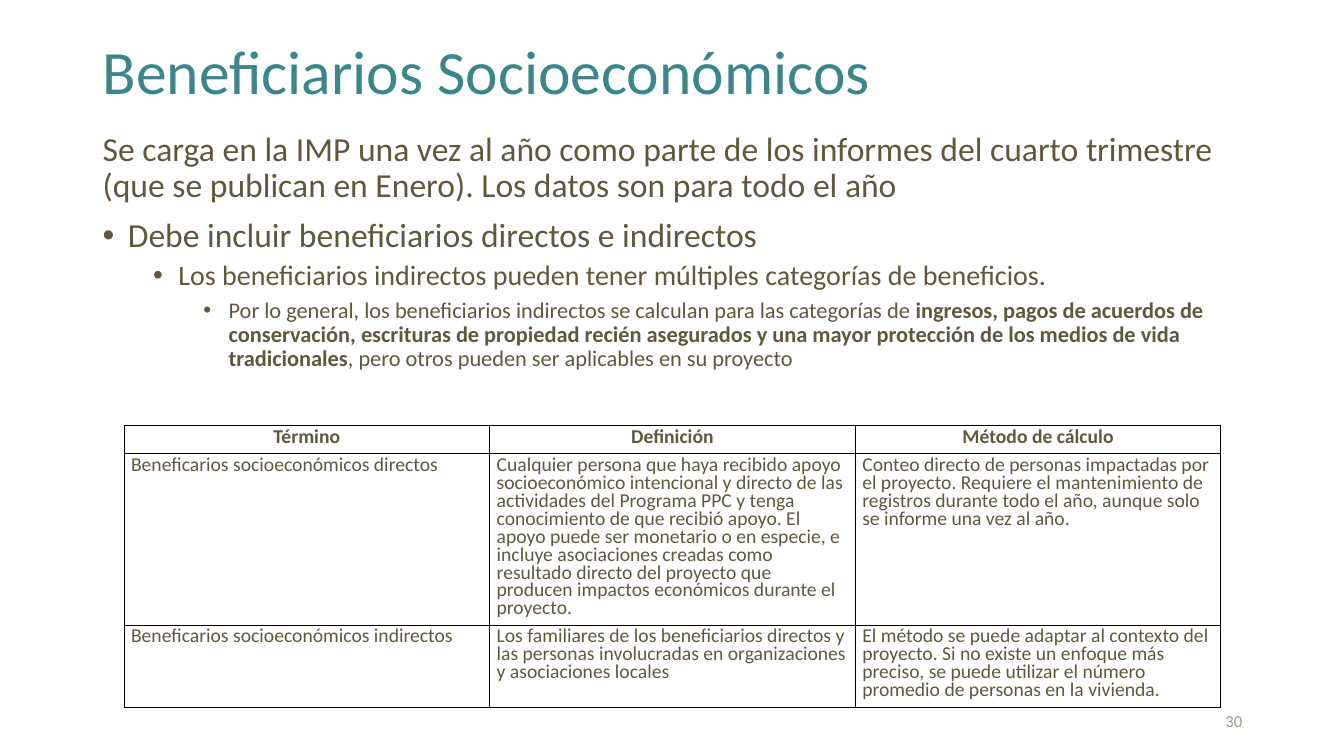
from lxml import etree
from pptx import Presentation
from pptx.dml.color import RGBColor
from pptx.enum.text import MSO_ANCHOR, PP_ALIGN
from pptx.oxml import parse_xml
from pptx.oxml.ns import nsdecls, qn
from pptx.util import Inches, Pt

FONT = "Calibri"
COLORS = {"title": "3C8689", "text": "60583D", "number": "9D9A92", "border": "000000"}

# Each point: text size, left margin, space before, bulleted, runs as (text, bold)
POINTS = [
    (24, 0, 0, False, [(
        "Se carga en la IMP una vez al año como parte de los informes del cuarto trimestre "
        "(que se publican en Enero). Los datos son para todo el año", False)]),
    (24, 0.25, 10, True, [("Debe incluir beneficiarios directos e indirectos", False)]),
    (20, 0.75, 5, True, [(
        "Los beneficiarios indirectos pueden tener múltiples categorías de beneficios.", False)]),
    (16, 1.25, 5, True, [
        ("Por lo general, los beneficiarios indirectos se calculan para las categorías de ", False),
        ("ingresos, pagos de acuerdos de conservación, escrituras de propiedad recién "
         "asegurados y una mayor protección de los medios de vida tradicionales", True),
        (", pero otros pueden ser aplicables en su proyecto", False)]),
]

TERMS = [
    ("Término", "Definición", "Método de cálculo"),
    ("Beneficarios socioeconómicos directos",
     "Cualquier persona que haya recibido apoyo socioeconómico intencional y directo de las "
     "actividades del Programa PPC y tenga conocimiento de que recibió apoyo. El apoyo puede "
     "ser monetario o en especie, e incluye asociaciones creadas como resultado directo del "
     "proyecto que producen impactos económicos durante el proyecto.",
     "Conteo directo de personas impactadas por el proyecto. Requiere el mantenimiento de "
     "registros durante todo el año, aunque solo se informe una vez al año."),
    ("Beneficarios socioeconómicos indirectos",
     "Los familiares de los beneficiarios directos y las personas involucradas en "
     "organizaciones y asociaciones locales",
     "El método se puede adaptar al contexto del proyecto. Si no existe un enfoque más "
     "preciso, se puede utilizar el número promedio de personas en la vivienda."),
]
ROW_HEIGHTS = (0.28, 1.7, 0.81)


def style(run, size, color, bold=False):
    run.font.name = FONT
    run.font.size = Pt(size)
    run.font.bold = bold
    run.font.color.rgb = RGBColor.from_string(COLORS[color])


def add_frame(slide, box, anchor=MSO_ANCHOR.TOP):
    """Add a wrapping text box and return its text frame."""
    frame = slide.shapes.add_textbox(*map(Inches, box)).text_frame
    frame.word_wrap = True
    frame.vertical_anchor = anchor
    return frame


def add_line(slide, box, text, size, color, align=PP_ALIGN.LEFT):
    """Add one vertically centred line of text."""
    paragraph = add_frame(slide, box, MSO_ANCHOR.MIDDLE).paragraphs[0]
    paragraph.text = text
    paragraph.alignment = align
    paragraph.line_spacing = 0.9
    style(paragraph.runs[0], size, color)


def add_bullet(paragraph, margin):
    properties = paragraph._p.get_or_add_pPr()
    properties.set("marL", str(Inches(margin)))
    properties.set("indent", str(Inches(-0.25)))
    bullet_font = etree.SubElement(properties, qn("a:buFont"))
    bullet_font.set("typeface", "Arial")
    etree.SubElement(properties, qn("a:buChar")).set("char", "•")


def add_points(slide, box):
    frame = add_frame(slide, box)
    for index, (size, margin, before, bulleted, runs) in enumerate(POINTS):
        paragraph = frame.add_paragraph() if index else frame.paragraphs[0]
        if bulleted:
            add_bullet(paragraph, margin)
        paragraph.line_spacing = 0.9
        paragraph.space_before = Pt(before)
        for text, bold in runs:
            run = paragraph.add_run()
            run.text = text
            style(run, size, "text", bold)


def add_borders(cell):
    properties = cell._tc.get_or_add_tcPr()
    for index, side in enumerate(("lnL", "lnR", "lnT", "lnB")):
        properties.insert(index, parse_xml(
            f'<a:{side} {nsdecls("a")} w="{Pt(0.75)}"><a:solidFill>'
            f'<a:srgbClr val="{COLORS["border"]}"/></a:solidFill></a:{side}>'))


def fill_cell(cell, text, header):
    cell.fill.background()
    cell.margin_left = cell.margin_right = Inches(0.07)
    cell.margin_top = cell.margin_bottom = Inches(0.05)
    add_borders(cell)
    paragraph = cell.text_frame.paragraphs[0]
    paragraph.text = text
    paragraph.alignment = PP_ALIGN.CENTER if header else PP_ALIGN.LEFT
    paragraph.line_spacing = Pt(12.8)
    style(paragraph.runs[0], 14, "text", header)


def add_terms_table(slide, left, top, width):
    table = slide.shapes.add_table(
        len(TERMS), len(TERMS[0]), Inches(left), Inches(top),
        Inches(width), Inches(sum(ROW_HEIGHTS))).table
    table.horz_banding = False
    for row, height in zip(table.rows, ROW_HEIGHTS):
        row.height = Inches(height)
    for row_index, row_texts in enumerate(TERMS):
        for column_index, text in enumerate(row_texts):
            fill_cell(table.cell(row_index, column_index), text, row_index == 0)


def main():
    presentation = Presentation()
    presentation.slide_width = Inches(13.33)
    presentation.slide_height = Inches(7.5)
    slide = presentation.slides.add_slide(presentation.slide_layouts[6])
    add_line(slide, (0.92, 0, 11.93, 1.47), "Beneficiarios Socioeconómicos", 44, "title")
    add_points(slide, (0.92, 1.26, 11.5, 2.81))
    add_line(slide, (9.42, 6.96, 3, 0.4), "30", 12, "number", PP_ALIGN.RIGHT)
    add_terms_table(slide, 1.23, 4.22, 10.88)
    presentation.save("out.pptx")


if __name__ == "__main__":
    main()
